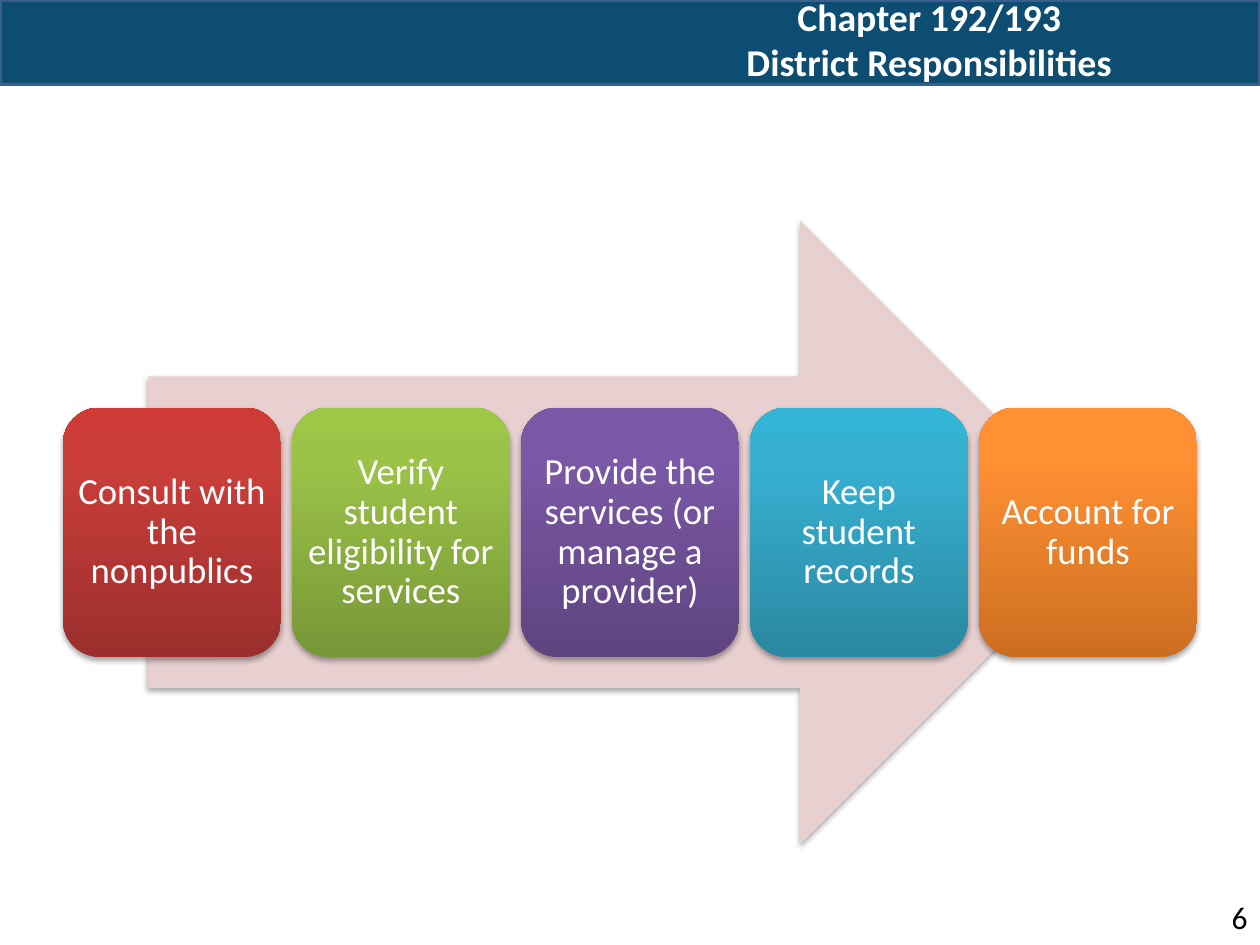
from pptx import Presentation
from pptx.dml.color import RGBColor
from pptx.enum.shapes import MSO_SHAPE as Preset
from pptx.enum.text import MSO_ANCHOR as Anchor, MSO_AUTO_SIZE as AutoSize, PP_ALIGN as Align
from pptx.oxml import parse_xml
from pptx.util import Inches, Pt

NAMESPACE = 'xmlns:a="http://schemas.openxmlformats.org/drawingml/2006/main"'
WIDTH, HEIGHT = 10, 7.5
WHITE = "FFFFFF"

# Text and gradient colours from bottom to top
STEPS = [
    ("Consult with the nonpublics", ("9C2F2D", "CB3E3A", "CE3B37")),
    ("Verify student eligibility for services", ("779737", "9BC348", "9DC746")),
    ("Provide the services (or manage a provider)", ("5F4480", "7B58A6", "7C57A8")),
    ("Keep student records", ("2A88A2", "37B1D2", "34B4D6")),
    ("Account for funds", ("CC6E20", "FF9034", "FF9136")),
]


def color(value):
    return RGBColor.from_string(value)


def inches(box):
    return [Inches(length) for length in box]


def write(shape, text, size, font_color, align=Align.CENTER, bold=False, margin=0.05, spacing=None):
    frame = shape.text_frame
    frame.text = text
    settings = dict(word_wrap=True, auto_size=AutoSize.NONE, vertical_anchor=Anchor.MIDDLE,
                    margin_left=Inches(margin), margin_right=Inches(margin),
                    margin_top=Inches(margin), margin_bottom=Inches(margin))
    for name, value in settings.items():
        setattr(frame, name, value)
    paragraph = frame.paragraphs[0]
    paragraph.alignment = align
    paragraph.line_spacing = spacing
    for name, value in dict(name="Calibri", size=Pt(size), bold=bold).items():
        setattr(paragraph.font, name, value)
    paragraph.font.color.rgb = color(font_color)


def add_preset(slide, preset, box, fill=None):
    shape = slide.shapes.add_shape(preset, *inches(box))
    shape.shadow.inherit = False
    shape.line.fill.background()
    if fill:
        shape.fill.solid()
        shape.fill.fore_color.rgb = color(fill)
    return shape


def add_soft_shadow(shape):
    effects = shape.element.spPr.find("{*}effectLst")
    effects.append(parse_xml(
        f'<a:outerShdw {NAMESPACE} blurRad="{Pt(3.1)}" dist="{Pt(1.8)}" dir="5400000" rotWithShape="0">'
        '<a:srgbClr val="000000"><a:alpha val="35000"/></a:srgbClr></a:outerShdw>'))


def fill_gradient(shape, colors):
    """Fill from bottom to top with stops at 0, 80 and 100 percent."""
    shape.fill.gradient()
    shape.fill.gradient_angle = 90
    stops = shape.element.spPr.find("{*}gradFill").find("{*}gsLst")
    for stop in list(stops):
        stops.remove(stop)
    for position, value in zip((0, 80, 100), colors):
        stops.append(parse_xml(f'<a:gs {NAMESPACE} pos="{position * 1000}">'
                               f'<a:srgbClr val="{value}"/></a:gs>'))


def build_header(slide, left, top, width, height):
    band = add_preset(slide, Preset.RECTANGLE, (left, top, width, height), "0E4D72")
    band.line.color.rgb = color("3A5F8C")
    band.line.width = Pt(2)
    title = slide.shapes.title
    title.left, title.top, title.width, title.height = inches(
        (left + width * 0.475, top, width * 0.525, height - 0.05))
    write(title, "Chapter 192/193\vDistrict Responsibilities", 21.6, WHITE, bold=True)
    title.element.getparent().append(title.element)  # bring in front of the band


def build_process(slide, left, top, width, height):
    """Draw a wide arrow with equally spaced step cards across its middle."""
    arrow_width = width * 0.85
    arrow = add_preset(slide, Preset.RIGHT_ARROW,
                       (left + (width - arrow_width) / 2, top, arrow_width, height), "E8D0D0")
    add_soft_shadow(arrow)
    card_width, card_height = 1.73, height * 0.4
    pitch = (width - card_width) / (len(STEPS) - 1)
    card_top = top + (height - card_height) / 2
    for index, (text, colors) in enumerate(STEPS):
        card = add_preset(slide, Preset.ROUNDED_RECTANGLE,
                          (left + index * pitch, card_top, card_width, card_height))
        fill_gradient(card, colors)
        add_soft_shadow(card)
        write(card, text, 21, WHITE, margin=0.01, spacing=0.9)


def build_page_number(slide, left, top, width, height):
    box = slide.shapes.add_textbox(*inches((left, top, width, height)))
    write(box, "6", 18, "000000", Align.RIGHT, margin=0.1)


def main():
    presentation = Presentation()
    presentation.slide_width, presentation.slide_height = inches((WIDTH, HEIGHT))
    slide = presentation.slides.add_slide(presentation.slide_layouts[5])
    build_header(slide, 0, 0, WIDTH, 0.67)
    build_process(slide, WIDTH * 0.05, 1.75, WIDTH * 0.9, HEIGHT * 0.66)
    build_page_number(slide, 9.33, 7.08, 0.67, 0.4)
    presentation.save("out.pptx")


if __name__ == "__main__":
    main()
